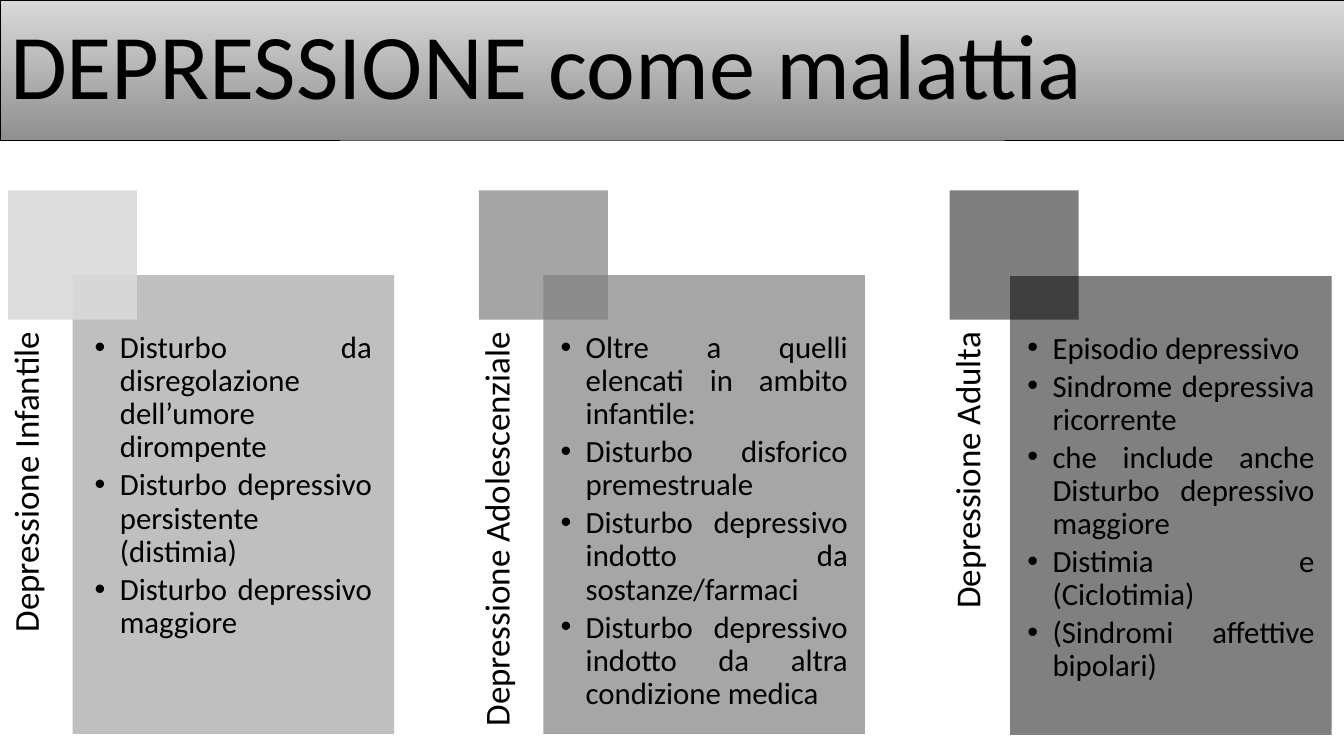
"""Build the slide on depression as an illness, with one column per stage of life."""
from dataclasses import dataclass
from typing import Any

from lxml import etree
from pptx import Presentation
from pptx.dml.color import RGBColor
from pptx.enum.shapes import MSO_SHAPE
from pptx.enum.text import MSO_ANCHOR, PP_ALIGN
from pptx.oxml.ns import qn
from pptx.util import Inches, Pt

RECT = MSO_SHAPE.RECTANGLE
TOP, MIDDLE = MSO_ANCHOR.TOP, MSO_ANCHOR.MIDDLE
LEFT, RIGHT, JUSTIFY = PP_ALIGN.LEFT, PP_ALIGN.RIGHT, PP_ALIGN.JUSTIFY

BLACK = RGBColor(0x00, 0x00, 0x00)
PALE = RGBColor(0xD9, 0xD9, 0xD9)
SILVER = RGBColor(0xBF, 0xBF, 0xBF)
ASH = RGBColor(0xA6, 0xA6, 0xA6)
STEEL = RGBColor(0x90, 0x90, 0x90)
GREY = RGBColor(0x80, 0x80, 0x80)

WIDTH, HEIGHT = Inches(13.33), Inches(7.5)
COL, ROW = WIDTH / 100, HEIGHT / 100
FIRST, PITCH = 0.6, 35.03
FONT = "Calibri"
INDENT = Inches(0.25)


@dataclass(frozen=True)
class Box:
    left: float
    top: float
    width: float
    height: float

    def place(self) -> tuple[int, int, int, int]:
        return (round(self.left * COL), round(self.top * ROW),
                round(self.width * COL), round(self.height * ROW))


@dataclass(frozen=True)
class Stage:
    label: str
    points: tuple[str, ...]
    card: RGBColor
    tab: RGBColor
    alpha: int
    inset: float
    shift: float = 4.8
    top: float = 36.4


STAGES = (
    Stage("Depressione Infantile",
          ("Disturbo da disregolazione dell’umore dirompente",
           "Disturbo depressivo persistente (distimia)",
           "Disturbo depressivo maggiore"),
          SILVER, PALE, 90, 1.65),
    Stage("Depressione Adolescenziale",
          ("Oltre a quelli elencati in ambito infantile:",
           "Disturbo disforico premestruale",
           "Disturbo depressivo indotto da sostanze/farmaci",
           "Disturbo depressivo indotto da altra condizione medica"),
          ASH, GREY, 70, 1.28),
    Stage("Depressione Adulta",
          ("Episodio depressivo",
           "Sindrome depressiva ricorrente",
           "che include anche Disturbo depressivo maggiore",
           "Distimia e (Ciclotimia)",
           "(Sindromi affettive bipolari)"),
          GREY, BLACK, 50, 1.28, 4.5, 36.53),
)


def apply(target: Any, values: dict[str, Any]) -> None:
    for name, value in values.items():
        setattr(target, name, value)


def set_frame(shape: Any, anchor: Any, insets: tuple[float, ...]) -> None:
    sides = ("margin_left", "margin_top", "margin_right", "margin_bottom")
    margins = {side: round(inset * COL) for side, inset in zip(sides, insets)}
    apply(shape.text_frame, {"word_wrap": True, "vertical_anchor": anchor, **margins})


def write(shape: Any, lines: tuple[str, ...], size: int, align: Any, gap: float = 0) -> None:
    frame = shape.text_frame
    frame.text = "\n".join(lines)
    for para in frame.paragraphs:
        apply(para, {"alignment": align, "line_spacing": 0.9,
                     "space_before": Pt(0), "space_after": Pt(gap)})
        apply(para.font, {"name": FONT, "size": Pt(size)})
        para.font.color.rgb = BLACK


def add_dots(shape: Any) -> None:
    for para in shape.text_frame.paragraphs:
        props = para._p.get_or_add_pPr()
        props.set("marL", str(INDENT))
        props.set("indent", str(-INDENT))
        etree.SubElement(props, qn("a:buFont"), typeface="Arial")
        etree.SubElement(props, qn("a:buChar"), char="•")


def add_block(slide: Any, box: Box) -> Any:
    block = slide.shapes.add_shape(RECT, *box.place())
    block.shadow.inherit = False
    return block


def add_panel(slide: Any, box: Box, color: RGBColor, alpha: int = 100) -> Any:
    panel = add_block(slide, box)
    panel.fill.solid()
    panel.fill.fore_color.rgb = color
    panel.line.fill.background()
    if alpha < 100:
        tint = panel.fill._xPr.find(qn("a:solidFill"))[0]
        etree.SubElement(tint, qn("a:alpha"), val=str(alpha * 1000))
    return panel


def add_title(slide: Any) -> None:
    title = add_block(slide, Box(0, 0, 100, 18.53))
    title.fill.gradient()
    title.fill.gradient_angle = 270
    for stop, color in zip(title.fill.gradient_stops, (PALE, STEEL)):
        stop.color.rgb = color
    title.line.color.rgb = BLACK
    title.line.width = Pt(0.5)
    set_frame(title, MIDDLE, (0.75, 0.38, 0.75, 0.38))
    write(title, ("DEPRESSIONE come malattia",), 66, LEFT)


def add_stage(slide: Any, stage: Stage, left: float) -> None:
    label = slide.shapes.add_textbox(*Box(left - 14.63, 62.53, 34.13, 8.53).place())
    label.rotation = 270
    set_frame(label, TOP, (0, 0, 4.2, 0))
    write(label, (stage.label,), 25, RIGHT)

    card = add_panel(slide, Box(left + stage.shift, stage.top, 23.93, 60.67), stage.card)
    set_frame(card, TOP, (stage.inset, 4.2, stage.inset, stage.inset))
    write(card, stage.points, 22, JUSTIFY, 3.3)
    add_dots(card)

    add_panel(slide, Box(left, 25.2, 9.6, 17.07), stage.tab, stage.alpha)


def main() -> None:
    deck = Presentation()
    apply(deck, {"slide_width": WIDTH, "slide_height": HEIGHT})
    slide = deck.slides.add_slide(deck.slide_layouts[6])
    for index, stage in enumerate(STAGES):
        add_stage(slide, stage, FIRST + index * PITCH)
    add_title(slide)
    deck.save("out.pptx")


if __name__ == "__main__":
    main()
